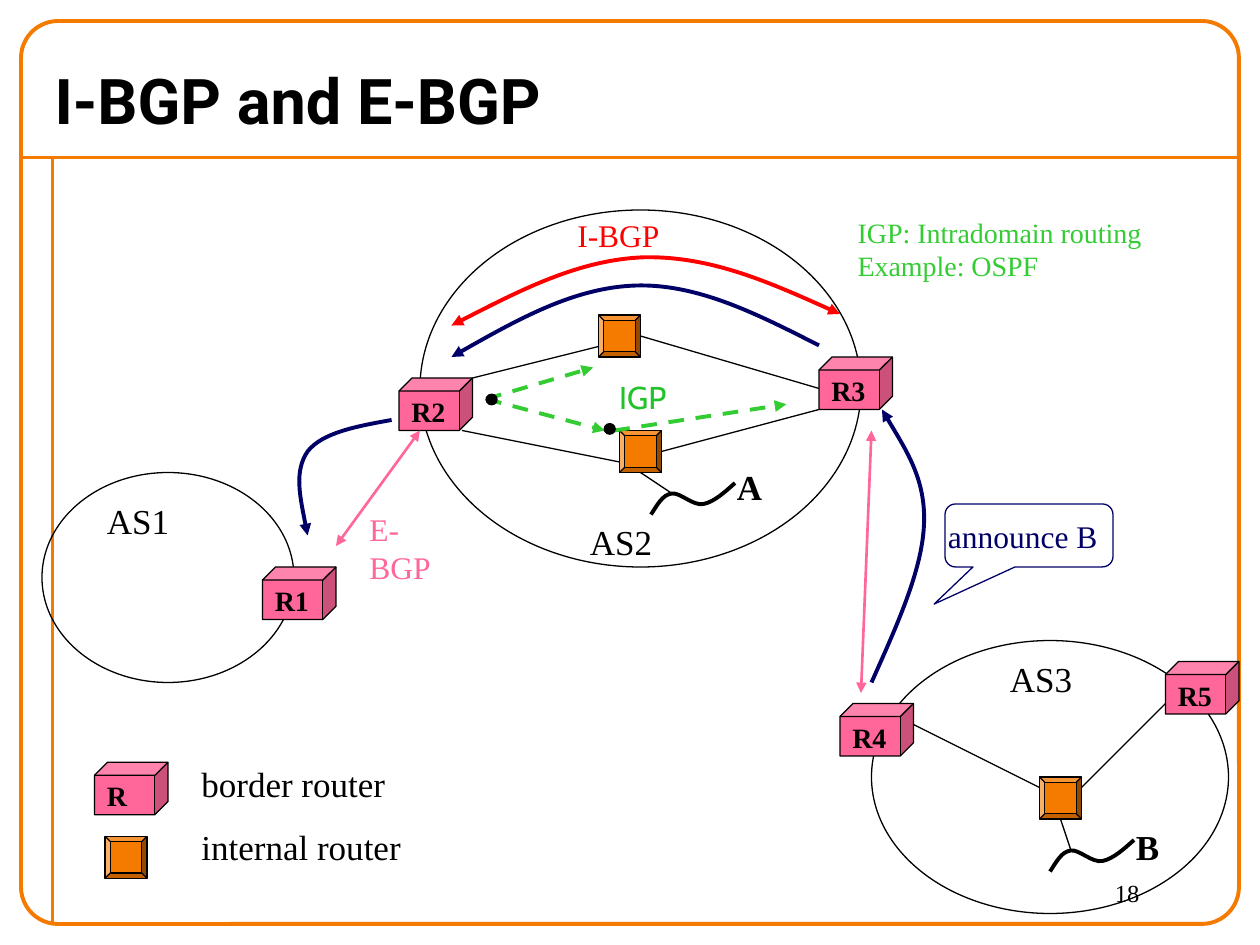
from dataclasses import dataclass
from typing import Optional

from lxml.etree import SubElement
from pptx import Presentation
from pptx.dml.color import RGBColor
from pptx.enum.dml import MSO_LINE
from pptx.enum.shapes import MSO_CONNECTOR, MSO_SHAPE
from pptx.enum.text import MSO_ANCHOR, MSO_AUTO_SIZE, PP_ALIGN
from pptx.oxml.ns import qn
from pptx.util import Inches, Pt

COLS, ROWS = 120, 90  # grid of twelfths of an inch


@dataclass(frozen=True)
class Theme:
    orange: str = "F47A00"
    pink: str = "FF6699"
    navy: str = "000066"
    red: str = "FF0000"
    green: str = "33CC33"
    igp_green: str = "22C22A"
    black: str = "000000"
    serif: str = "Times New Roman"
    title_font: str = "Roboto"
    igp_font: str = "Cabin"
    title: int = 36
    name: int = 20
    session: int = 18
    router: int = 16
    number: int = 14
    thin: float = 0.75
    medium: float = 1.5
    thick: float = 2.25


@dataclass(frozen=True)
class Label:
    text: str
    x: float
    y: float
    w: float
    h: float = 5.2
    size: int = 20
    color: str = "000000"
    font: str = "Times New Roman"
    bold: bool = False
    wrap: bool = False


@dataclass(frozen=True)
class Link:
    """A straight line between two grid points."""
    x1: float
    y1: float
    x2: float
    y2: float
    color: str = "000000"
    width: float = 0.75
    head: bool = False
    tail: bool = False
    dash: bool = False


@dataclass(frozen=True)
class Curve:
    """A start point, then three points for each Bézier segment."""
    points: tuple
    color: str = "000000"
    head: bool = False
    tail: bool = False


T = Theme()
AS_CLOUDS = [(4, 45, 24, 20), (83, 61, 34, 26), (40, 20, 42, 34)]
BORDER_ROUTERS = [("R", 9, 72.6), ("R1", 25, 54), ("R2", 38, 36),
                  ("R3", 78, 34), ("R4", 80, 67), ("R5", 111, 63)]
INTERNAL_ROUTERS = [(10, 79.65), (99, 74), (57, 30), (59, 41)]
NETWORKS = [(62, 49), (100, 83)]
WAVE = [(0, 0), (0.6, -0.9), (1.1, -1.9), (2, -2), (2.8, -2.1), (4, -0.8),
        (5, -1), (6, -1.2), (7, -2.1), (8, -3)]
LINKS = [
    Link(87, 69, 99, 75), Link(103, 75, 111, 67), Link(101, 78, 102, 81),
    Link(45, 36, 57, 33), Link(61, 32, 78, 37), Link(44, 41, 59, 44),
    Link(63, 43, 78, 39), Link(61, 45, 64, 47),
    Link(83, 41, 82, 66, T.pink, T.medium, head=True, tail=True),
    Link(32, 52, 40, 41, T.pink, T.medium, head=True, tail=True),
    Link(46.3, 38, 56.5, 35, T.green, T.thick, tail=True, dash=True),
    Link(46.3, 38, 57.6, 41, T.green, T.thick, tail=True, dash=True),
    Link(58.5, 41, 74.9, 38.5, T.green, T.thick, tail=True, dash=True),
]
IGP_DOTS = [(46.3, 37.55), (57.55, 40.35)]
CURVES = [
    Curve(((78, 32.9), (72.1, 29.9), (66.4, 27), (60.5, 27.2),
           (54.7, 27.4), (48.8, 30.7), (43, 34)), T.navy, tail=True),
    Curve(((37.3, 40), (34, 40.6), (30.7, 41.2), (29.3, 43),
           (28, 44.9), (28.7, 47.9), (29.3, 51)), T.navy, tail=True),
    Curve(((83, 65), (85.4, 59.6), (87.8, 54.4), (88, 50),
           (88.2, 45.7), (86, 42.4), (84, 39)), T.navy, tail=True),
    Curve(((80, 29.9), (73.8, 27.1), (67.7, 24.4), (61.4, 24.5),
           (55.3, 24.7), (49.2, 27.8), (43, 31)), T.red, head=True, tail=True),
]
LABELS = [
    Label("border router", 18, 72, 19.9), Label("internal router", 18, 78, 21.4),
    Label("AS1", 9, 47, 8.4), Label("AS2", 55, 49, 8.4), Label("AS3", 95, 62, 8.4),
    Label("A", 69, 43.7, 4.8, bold=True), Label("B", 107, 78, 4.7, bold=True),
    Label("E-BGP", 34, 48, 11, 4.8, T.session, T.pink),
    Label("I-BGP", 53.8, 20, 10.2, 4.8, T.session, T.red),
    Label("IGP", 57.8, 35.4, 7.2, 4.8, T.session, T.igp_green, T.igp_font),
    Label("IGP: Intradomain routing\nExample: OSPF", 80.5, 19.9, 37.2, 7.7,
          T.router, T.green, wrap=True),
    Label("18", 105, 83, 12, 5, T.number, wrap=True),
]


def u(n: float) -> int:
    """Grid units to EMU."""
    return Inches(n / 12)


def add_run(p, text: str, size: int, color: str, font: str, bold: bool = False):
    r = p.add_run()
    r.text = text
    r.font.size, r.font.name, r.font.bold = Pt(size), font, bold
    r.font.color.rgb = RGBColor.from_string(color)


def style_line(line, color: str, width: float, head=False, tail=False, dash=False):
    line.color.rgb = RGBColor.from_string(color)
    line.width = Pt(width)
    if dash:
        line.dash_style = MSO_LINE.DASH
    for tag, wanted in (("a:headEnd", head), ("a:tailEnd", tail)):
        if wanted:
            SubElement(line._ln, qn(tag)).set("type", "triangle")


def add_box(s, kind, x: float, y: float, w: float, h: float,
            fill: Optional[str] = None, color=T.black, width=T.thin, adj=()):
    sp = s.shapes.add_shape(kind, u(x), u(y), u(w), u(h))
    sp.shadow.inherit = False
    if fill:
        sp.fill.solid()
        sp.fill.fore_color.rgb = RGBColor.from_string(fill)
    else:
        sp.fill.background()
    style_line(sp.line, color, width)
    for i, value in enumerate(adj):
        sp.adjustments[i] = value
    return sp


def add_label(s, label: Label):
    tf = s.shapes.add_textbox(u(label.x), u(label.y), u(label.w), u(label.h)).text_frame
    tf.word_wrap = label.wrap
    tf.auto_size = MSO_AUTO_SIZE.SHAPE_TO_FIT_TEXT
    for i, text in enumerate(label.text.split("\n")):
        p = tf.add_paragraph() if i else tf.paragraphs[0]
        add_run(p, text, label.size, label.color, label.font, label.bold)


def add_link(s, k: Link):
    c = s.shapes.add_connector(MSO_CONNECTOR.STRAIGHT, u(k.x1), u(k.y1), u(k.x2), u(k.y2))
    style_line(c.line, k.color, k.width, k.head, k.tail, k.dash)
    SubElement(c._element.spPr, qn("a:effectLst"))


def add_curve(s, curve: Curve):
    start, *rest = [(u(x), u(y)) for x, y in curve.points]
    builder = s.shapes.build_freeform(*start)
    builder.add_line_segments(rest, close=False)
    sp = builder.convert_to_shape()
    sp.shadow.inherit = False
    sp.fill.background()
    style_line(sp.line, curve.color, T.thick, curve.head, curve.tail)
    # Every three straight segments become one cubic Bézier.
    outline = next(sp._element.iter(qn("a:path")))
    for i, segment in enumerate(outline.findall(qn("a:lnTo"))):
        if i % 3 == 0:
            bezier = SubElement(outline, qn("a:cubicBezTo"))
        bezier.append(segment[0])
        outline.remove(segment)


def add_border_router(s, name: str, x: float, y: float):
    add_box(s, MSO_SHAPE.CUBE, x, y, 7, 5, T.pink)
    add_label(s, Label(name, x, y + 1, 6, 4.4, T.router, bold=True, wrap=True))


def add_title(s, text: str):
    title = s.shapes.title
    title.left, title.top, title.width, title.height = u(4), u(5), u(116), u(9)
    tf = title.text_frame
    tf.auto_size, tf.vertical_anchor = MSO_AUTO_SIZE.NONE, MSO_ANCHOR.MIDDLE
    tf.paragraphs[0].alignment = PP_ALIGN.LEFT
    add_run(tf.paragraphs[0], text, T.title, T.black, T.title_font, True)


def add_callout(s, text: str):
    sp = add_box(s, MSO_SHAPE.ROUNDED_RECTANGULAR_CALLOUT, 90, 48, 16, 6,
                 color=T.navy, adj=(-0.565, 1.09, 0.167))
    tf = sp.text_frame
    tf.word_wrap, tf.vertical_anchor = False, MSO_ANCHOR.MIDDLE
    tf.paragraphs[0].alignment = PP_ALIGN.RIGHT
    add_run(tf.paragraphs[0], text, T.session, T.navy, T.serif)


def main():
    prs = Presentation()
    prs.slide_width, prs.slide_height = u(COLS), u(ROWS)
    s = prs.slides.add_slide(prs.slide_layouts[5])
    add_link(s, Link(2, 15, 118, 15, T.orange, T.thick))
    add_link(s, Link(5, 15, 5, 88, T.orange, T.thick))
    add_box(s, MSO_SHAPE.ROUNDED_RECTANGLE, 2, 2, COLS - 4, ROWS - 4,
            color=T.orange, width=T.thick, adj=(0.041,))
    add_title(s, "I-BGP and E-BGP")
    for cloud in AS_CLOUDS:
        add_box(s, MSO_SHAPE.OVAL, *cloud)
    for router in BORDER_ROUTERS:
        add_border_router(s, *router)
    for x, y in INTERNAL_ROUTERS:
        add_box(s, MSO_SHAPE.BEVEL, x, y, 4, 4, T.orange, adj=(0.125,))
    for link in LINKS:
        add_link(s, link)
    for x, y in IGP_DOTS:
        add_box(s, MSO_SHAPE.OVAL, x, y, 1.05, 1, T.black)
    for x, y in NETWORKS:
        add_curve(s, Curve(tuple((x + dx, y + dy) for dx, dy in WAVE)))
    for curve in CURVES:
        add_curve(s, curve)
    add_callout(s, "announce B")
    for label in LABELS:
        add_label(s, label)
    prs.save("out.pptx")


if __name__ == "__main__":
    main()
